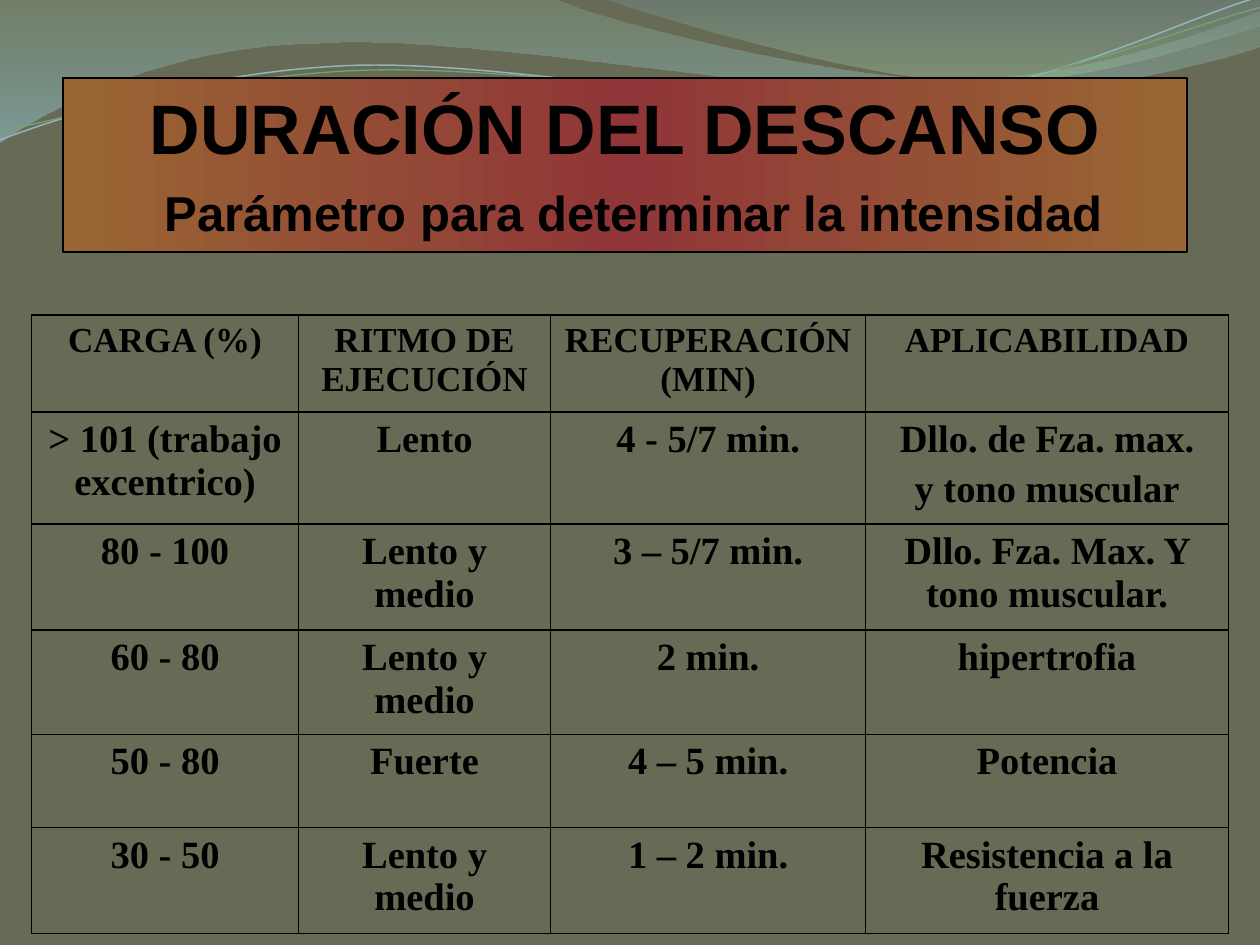
from dataclasses import dataclass
from math import cos, radians, sin
from typing import Optional

from lxml.etree import SubElement
from pptx import Presentation
from pptx.dml.color import RGBColor
from pptx.enum.text import MSO_ANCHOR, PP_ALIGN
from pptx.oxml import parse_xml
from pptx.oxml.ns import nsdecls, qn
from pptx.util import Inches, Pt


@dataclass(frozen=True)
class Theme:
    background: str = "676A55"
    ink: str = "000000"
    title_font: str = "Arial"
    table_font: str = "Times New Roman"
    title_size: int = 40
    spacer_size: int = 36
    subtitle_size: int = 28
    header_size: int = 20
    body_size: int = 22


@dataclass(frozen=True)
class Stop:
    position: int
    color: str
    opacity: int = 100


@dataclass(frozen=True)
class Wave:
    """Path in inches: two numbers make a straight step, six a Bezier curve."""
    start: tuple[float, float]
    steps: list[tuple[float, ...]]
    stops: Optional[list[Stop]] = None
    line_color: str = ""
    line_width: float = 0
    center: tuple[float, float] = (0, 0)
    tilt: float = 0


THEME = Theme()
TILT = -2.7

RIBBONS = [
    Wave((0, 0), [(4.4, -0.01), (4.76, 0.17, 6.64, 0.63, 7.58, 0.63),
                  (8.53, 0.63, 9.58, 0.26, 10, 0.09), (10.01, 0.36),
                  (9.83, 0.44, 8.7, 0.76, 7.46, 0.75),
                  (6.22, 0.75, 3.82, 0.28, 2.57, 0.34),
                  (1.29, 0.36, 0.46, 0.83, -0.01, 1.13)],
         [Stop(0, "809980", 45), Stop(100, "8DC1CF", 55)]),
    Wave((4.79, -0.01), [(5.09, 0.11, 6.82, 0.62, 7.69, 0.65),
                         (8.56, 0.69, 9.61, 0.32, 10, 0.21), (10, 0)],
         [Stop(0, "779BA4", 30), Stop(80, "96B996", 45)]),
]
STRANDS = [
    Wave((0, 1.11), [(0.48, 0.93, 1.58, 0.57, 2.77, 0.52),
                     (3.95, 0.47, 5.93, 0.89, 7.13, 0.8),
                     (8.33, 0.71, 9.38, 0.15, 9.98, -0.02)],
         line_color="94B5BE", line_width=0.85, center=(4.99, 0.57), tilt=TILT),
    Wave((0, 1.04), [(0.47, 0.96, 1.64, 0.61, 2.83, 0.56),
                     (4.03, 0.51, 5.97, 0.84, 7.17, 0.75),
                     (8.36, 0.67, 9.41, 0.21, 10, 0.06)],
         line_color="72A376", line_width=0.75, center=(5, 0.59), tilt=TILT),
]

TITLE_STOPS = [Stop(0, "996633"), Stop(50, "903638"), Stop(100, "996633")]

COLUMN_WIDTHS = [2.12, 2, 2.5, 2.88]
ROW_HEIGHTS = [0.77, 0.89, 0.84, 0.83, 0.74, 0.84]
REST_TABLE = [
    ["CARGA (%)", "RITMO DE EJECUCIÓN", "RECUPERACIÓN (MIN)", "APLICABILIDAD"],
    ["> 101 (trabajo excentrico)", "Lento", "4 - 5/7 min.",
     "Dllo. de Fza. max.\ny tono muscular"],
    ["80 - 100", "Lento y medio", "3 – 5/7 min.", "Dllo. Fza. Max. Y tono muscular."],
    ["60 - 80", "Lento y medio", "2 min.", "hipertrofia"],
    ["50 - 80", "Fuerte", "4 – 5 min.", "Potencia"],
    ["30 - 50", "Lento y medio", "1 – 2 min.", "Resistencia a la fuerza"],
]


def rgb(color: str) -> RGBColor:
    return RGBColor.from_string(color)


def set_gradient(shape, stops: list[Stop], angle: int) -> None:
    """Fill a shape with a linear gradient that may be transparent."""
    shape.fill.background()
    stop_xml = "".join(
        f'<a:gs pos="{s.position * 1000}"><a:srgbClr val="{s.color}">'
        f'<a:alpha val="{s.opacity * 1000}"/></a:srgbClr></a:gs>' for s in stops)
    gradient = parse_xml(
        f'<a:gradFill {nsdecls("a")} rotWithShape="1"><a:gsLst>{stop_xml}</a:gsLst>'
        f'<a:lin ang="{angle * 60000}" scaled="0"/></a:gradFill>')
    properties = shape._element.spPr
    properties.replace(properties.find(qn("a:noFill")), gradient)


def level_point(wave: Wave, x: float, y: float) -> tuple[int, int]:
    """Place a point as it lies before the wave is tilted."""
    turn = radians(-wave.tilt)
    cx, cy = wave.center
    dx, dy = x - cx, y - cy
    return (Inches(cx + dx * cos(turn) - dy * sin(turn)),
            Inches(cy + dx * sin(turn) + dy * cos(turn)))


def bend(shape, wave: Wave) -> None:
    """Join each three straight steps of a curve into one Bezier step."""
    lines = iter(list(shape._element.iter(qn("a:lnTo"))))
    for step in wave.steps:
        first = next(lines)
        if len(step) == 6:
            first.tag = qn("a:cubicBezTo")
            for _ in range(2):
                extra = next(lines)
                first.append(extra[0])
                extra.getparent().remove(extra)


def draw_wave(shapes, wave: Wave) -> None:
    builder = shapes.build_freeform(*level_point(wave, *wave.start))
    builder.add_line_segments(
        [level_point(wave, *step[i:i + 2]) for step in wave.steps
         for i in range(0, len(step), 2)], close=bool(wave.stops))
    ribbon = builder.convert_to_shape()
    bend(ribbon, wave)
    ribbon.rotation = wave.tilt
    ribbon.shadow.inherit = False
    if wave.stops:
        set_gradient(ribbon, wave.stops, 90)
        ribbon.line.fill.background()
    else:
        ribbon.fill.background()
        ribbon.line.color.rgb = rgb(wave.line_color)
        ribbon.line.width = Pt(wave.line_width)


def draw_title(slide) -> None:
    title = slide.shapes.title
    slide.shapes._spTree.append(title._element)  # in front of the waves
    title.left, title.top = Inches(0.5), Inches(0.62)
    title.width, title.height = Inches(8.92), Inches(1.38)
    set_gradient(title, TITLE_STOPS, 0)
    title.line.color.rgb = rgb(THEME.ink)
    title.line.width = Pt(0.75)
    frame = title.text_frame
    frame.vertical_anchor = MSO_ANCHOR.TOP
    frame.text = "DURACIÓN DEL DESCANSO"
    heading, subtitle = frame.paragraphs[0], frame.add_paragraph()
    spacer, words = subtitle.add_run(), subtitle.add_run()
    spacer.text, words.text = " ", "Parámetro para determinar la intensidad"
    spacer.font.size, words.font.size = Pt(THEME.spacer_size), Pt(THEME.subtitle_size)
    heading.font.size = Pt(THEME.title_size)
    heading.font.bold = words.font.bold = True
    for paragraph in (heading, subtitle):
        paragraph.alignment = PP_ALIGN.CENTER
        paragraph.font.name = THEME.title_font
        paragraph.font.color.rgb = rgb(THEME.ink)


def set_borders(cell) -> None:
    properties = cell._tc.get_or_add_tcPr()
    for index, side in enumerate(("lnL", "lnR", "lnT", "lnB")):
        properties.insert(index, parse_xml(
            f'<a:{side} {nsdecls("a")} w="{Pt(1)}"><a:solidFill>'
            f'<a:srgbClr val="{THEME.ink}"/></a:solidFill></a:{side}>'))


def fill_cell(cell, text: str, size: int) -> None:
    cell.text = text
    cell.fill.background()
    set_borders(cell)
    for paragraph in cell.text_frame.paragraphs:
        paragraph.alignment = PP_ALIGN.CENTER
        paragraph.font.name = THEME.table_font
        paragraph.font.size = Pt(size)
        paragraph.font.bold = True
        paragraph.font.color.rgb = rgb(THEME.ink)
        spacing = SubElement(paragraph._p.get_or_add_pPr(), qn("a:spcBef"))
        SubElement(spacing, qn("a:spcPct")).set("val", "20000")
        paragraph._p.pPr.insert(0, spacing)


def draw_table(slide) -> None:
    table = slide.shapes.add_table(
        len(ROW_HEIGHTS), len(COLUMN_WIDTHS), Inches(0.25), Inches(2.5),
        Inches(sum(COLUMN_WIDTHS)), Inches(sum(ROW_HEIGHTS))).table
    table.first_row = table.horz_banding = False
    for column, width in zip(table.columns, COLUMN_WIDTHS):
        column.width = Inches(width)
    for index, (row, height) in enumerate(zip(table.rows, ROW_HEIGHTS)):
        row.height = Inches(height)
        size = THEME.body_size if index else THEME.header_size
        for cell, text in zip(row.cells, REST_TABLE[index]):
            fill_cell(cell, text, size)


def main() -> None:
    deck = Presentation()
    deck.slide_width, deck.slide_height = Inches(10), Inches(7.5)
    slide = deck.slides.add_slide(deck.slide_layouts[5])
    slide.background.fill.solid()
    slide.background.fill.fore_color.rgb = rgb(THEME.background)
    # Waves along the top
    for ribbon in RIBBONS:
        draw_wave(slide.shapes, ribbon)
    strand_group = slide.shapes.add_group_shape()
    for strand in STRANDS:
        draw_wave(strand_group.shapes, strand)
    # Content
    draw_title(slide)
    draw_table(slide)
    deck.save("out.pptx")


if __name__ == "__main__":
    main()
